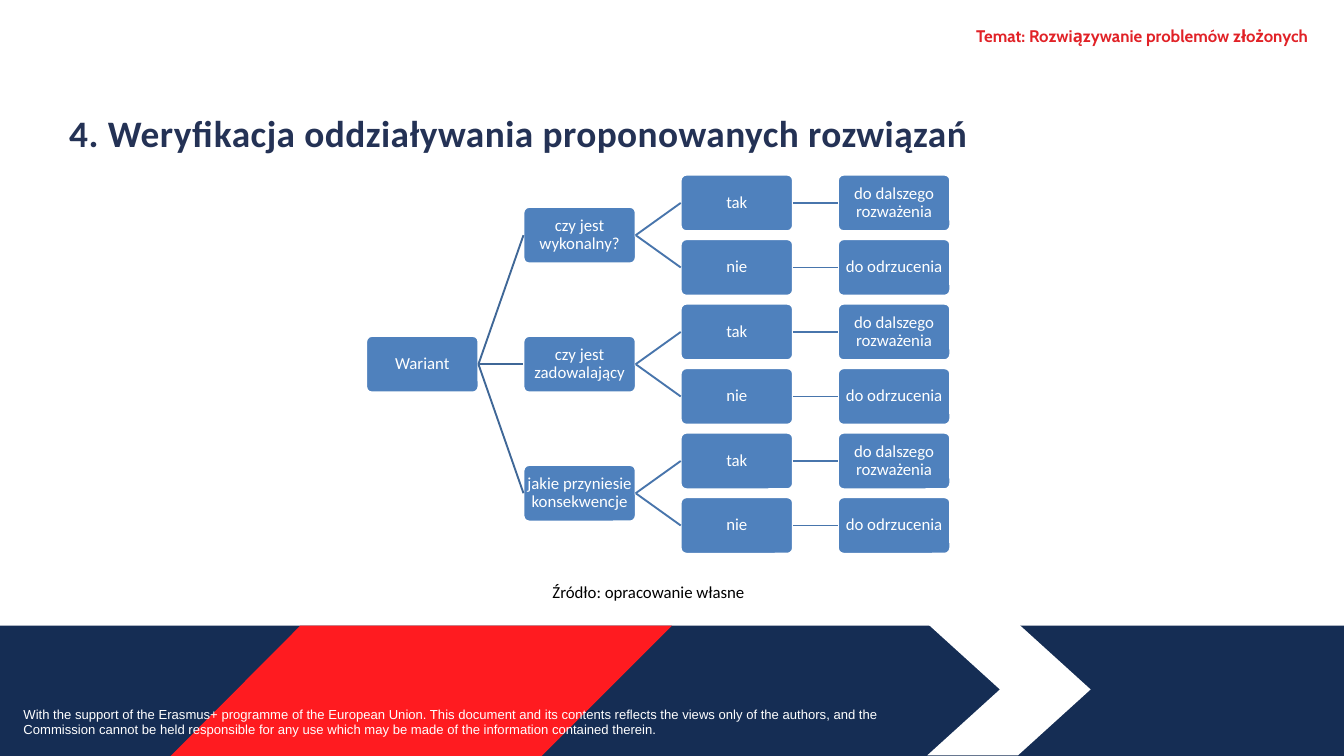
from lxml import etree
from pptx import Presentation
from pptx.dml.color import RGBColor
from pptx.enum.shapes import MSO_CONNECTOR, MSO_SHAPE
from pptx.enum.text import MSO_ANCHOR, PP_ALIGN
from pptx.oxml.ns import qn
from pptx.util import Inches, Pt

RECT = MSO_SHAPE.RECTANGLE
ROUND = MSO_SHAPE.ROUNDED_RECTANGLE
LINE = MSO_CONNECTOR.STRAIGHT
LEFT, MID, RIGHT = PP_ALIGN.LEFT, PP_ALIGN.CENTER, PP_ALIGN.RIGHT
TOP, CENTER = MSO_ANCHOR.TOP, MSO_ANCHOR.MIDDLE

WHITE = RGBColor(0xFF, 0xFF, 0xFF)
BLACK = RGBColor(0x00, 0x00, 0x00)
NAVY = RGBColor(0x15, 0x2D, 0x54)
INK = RGBColor(0x24, 0x32, 0x55)
RED = RGBColor(0xFF, 0x1B, 0x20)
TOPIC = RGBColor(0xE1, 0x22, 0x27)
BLUE = RGBColor(0x4F, 0x81, 0xBD)
DARK = RGBColor(0x3F, 0x67, 0x97)
STEEL = RGBColor(0x48, 0x75, 0xAC)

BOX_W, BOX_H = 1.67, 0.84
COL_X, COL_STEP = 5.45, 2.34
ROW_Y, ROW_STEP = 2.6, 0.96
LINKS = [DARK, STEEL, STEEL]

ANSWERS = [
    ("tak", [("do dalszego rozważenia", [])]),
    ("nie", [("do odrzucenia", [])]),
]
TESTS = ["czy jest wykonalny?", "czy jest zadowalający", "jakie przyniesie konsekwencje"]
TREE = ("Wariant", [(test, ANSWERS) for test in TESTS])


def write(frame, text, size=18, font="Calibri", color=WHITE, bold=False, align=LEFT,
          anchor=TOP, pad=(0.1, 0.05, 0.1, 0.05), lead=None, before=None, track=None):
    frame.word_wrap = True
    frame.vertical_anchor = anchor
    frame.margin_left, frame.margin_top, frame.margin_right, frame.margin_bottom = map(Inches, pad)
    para = frame.paragraphs[0]
    para.alignment = align
    if lead:
        para.line_spacing = lead
    if before:
        para.space_before = Pt(before)
    run = para.add_run()
    run.text = text
    run.font.size = Pt(size)
    run.font.name = font
    run.font.bold = bold
    run.font.color.rgb = color
    if track:
        run._r.get_or_add_rPr().set("spc", str(track))


class Deck:
    def __init__(self, width, height):
        self.show = Presentation()
        self.show.slide_width = Inches(width)
        self.show.slide_height = Inches(height)
        self.slide = self.show.slides.add_slide(self.show.slide_layouts[6])
        self.shapes = self.slide.shapes

    def paint(self, shape, fill, edge=None):
        shape.shadow.inherit = False
        shape.fill.solid()
        shape.fill.fore_color.rgb = fill
        if edge is None:
            shape.line.fill.background()
        else:
            shape.line.color.rgb = edge
            shape.line.width = Pt(2)
        return shape

    def band(self, x, y, w, h, fill):
        self.paint(self.shapes.add_shape(RECT, Inches(x), Inches(y), Inches(w), Inches(h)), fill)

    def outline(self, points, fill):
        start, *rest = [(Inches(x), Inches(y)) for x, y in points]
        form = self.shapes.build_freeform(*start)
        form.add_line_segments(rest, close=True)
        self.paint(form.convert_to_shape(), fill)

    def label(self, text, x, y, w, h, **style):
        box = self.shapes.add_textbox(Inches(x), Inches(y), Inches(w), Inches(h))
        write(box.text_frame, text, **style)

    def node(self, text, x, y):
        box = self.shapes.add_shape(ROUND, Inches(x), Inches(y), Inches(BOX_W), Inches(BOX_H))
        box.adjustments[0] = 0.1
        self.paint(box, BLUE, WHITE)
        write(box.text_frame, text, align=MID, anchor=CENTER, pad=[0.01] * 4, lead=0.9)
        return box

    def link(self, start, end, color):
        line = self.shapes.add_connector(LINE, 0, 0, 0, 0)
        line.begin_connect(start, 3)
        line.end_connect(end, 1)
        line.line.color.rgb = color
        line.line.width = Pt(2)
        etree.SubElement(line._element.spPr, qn("a:effectLst"))

    def tree(self, branch, row=0, level=0):
        text, kids = branch
        y = ROW_Y + (row + (leaves(branch) - 1) / 2) * ROW_STEP
        box = self.node(text, COL_X + level * COL_STEP, y)
        for kid in kids:
            self.link(box, self.tree(kid, row, level + 1), LINKS[level])
            row += leaves(kid)
        return box


def leaves(branch):
    return sum(map(leaves, branch[1])) or 1


def main():
    deck = Deck(20, 11.25)
    deck.band(0, 9.31, 20, 1.94, NAVY)
    deck.outline([(15.15, 11.24), (13.8, 11.24), (14.88, 10.26),
                  (13.8, 9.28), (15.15, 9.28), (16.23, 10.26)], WHITE)
    deck.outline([(10, 9.31), (8.06, 11.25), (2.54, 11.25), (4.47, 9.31)], RED)
    deck.label("4. Weryfikacja oddziaływania proponowanych rozwiązań", 1.03, 1.62, 18.39, 1.47,
               size=40, color=INK, bold=True, pad=(0, 0.02, 0, 0), before=1.1, track=50)
    deck.label("With the support of the Erasmus+ programme of the European Union. "
               "This document and its contents reflects the views only of the authors, "
               "and the Commission cannot be held responsible for any use which may be "
               "made of the information contained therein.",
               0.25, 10.46, 13.75, 0.57, size=14, font="Arial")
    deck.label("Temat: Rozwiązywanie problemów złożonych ", 9, 0.37, 10.52, 0.32,
               font="Cabin", color=TOPIC, bold=True, align=RIGHT, pad=(0, 0.01, 0, 0))
    deck.tree(TREE)
    deck.label("Źródło: opracowanie własne", 6.25, 8.61, 6.8, 0.4, color=BLACK, align=MID)
    deck.show.save("out.pptx")


if __name__ == "__main__":
    main()
